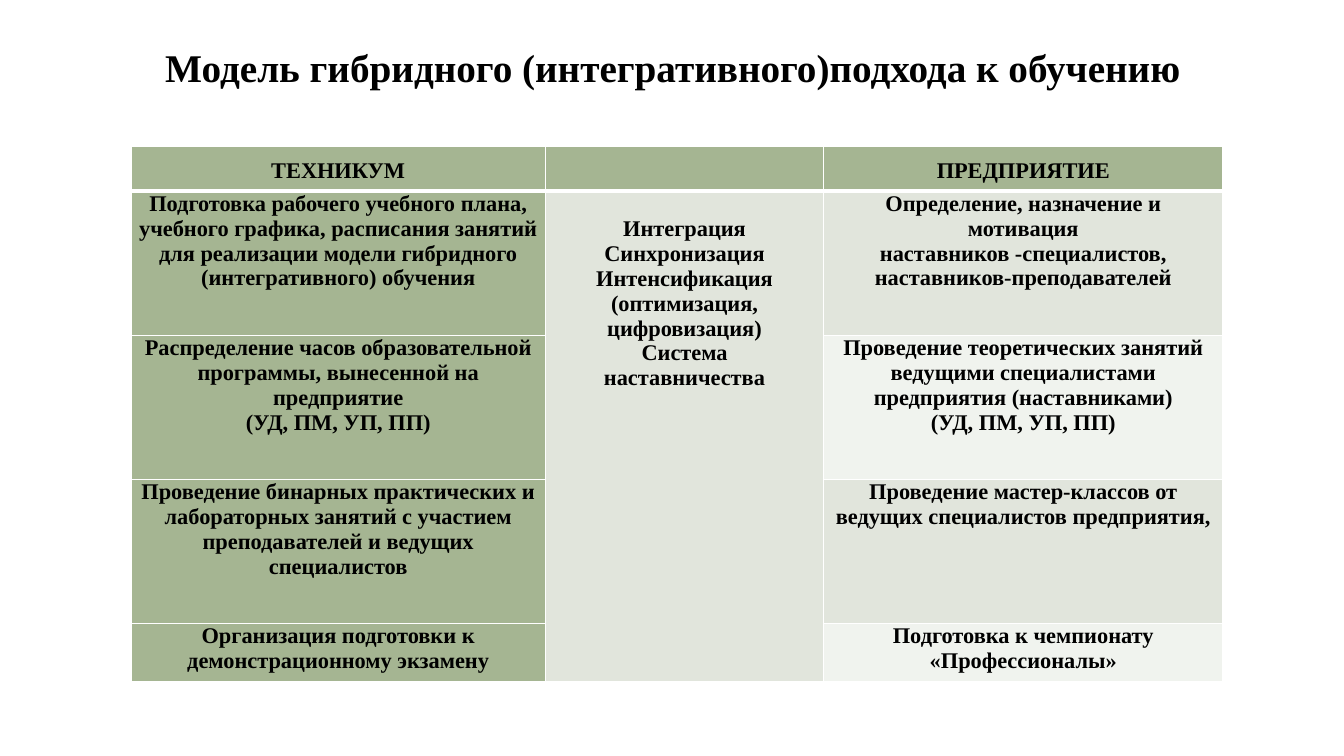
from lxml import etree
from pptx import Presentation, util as u
from pptx.dml.color import RGBColor
from pptx.enum import text
from pptx.oxml import ns

COLORS = {"ink": "000000", "line": "FFFFFF", "head": "A5B592",
          "odd": "E1E5DC", "even": "F0F3EE"}
FONT = "Times New Roman"
WIDE, HIGH = 13.33, 7.5

TITLE = "Модель гибридного (интегративного)подхода к обучению"
COLS = [4.11, 2.76, 3.96]
ROWS = [0.45, 1.43, 1.43, 1.43, 0.57]
COLLEGE = [
    "ТЕХНИКУМ",
    "Подготовка рабочего учебного плана, учебного графика, расписания "
    "занятий для реализации модели гибридного (интегративного) обучения",
    "Распределение часов образовательной программы, вынесенной на "
    "предприятие\n(УД, ПМ, УП, ПП)",
    "Проведение бинарных практических и лабораторных занятий с участием "
    "преподавателей и ведущих специалистов",
    "Организация подготовки к демонстрационному экзамену",
]
SHARED = ("Интеграция\nСинхронизация\nИнтенсификация\n"
          "(оптимизация, цифровизация)\nСистема\nнаставничества")
FIRM = [
    "ПРЕДПРИЯТИЕ",
    "Определение, назначение и мотивация\nнаставников -специалистов,\n"
    "наставников-преподавателей",
    "Проведение теоретических занятий ведущими специалистами предприятия "
    "(наставниками)\n(УД, ПМ, УП, ПП)",
    "Проведение мастер-классов от ведущих специалистов предприятия,",
    "Подготовка к чемпионату «Профессионалы»",
]


class Deck:
    def __init__(self):
        self.file = Presentation()
        self.file.slide_width = u.Inches(WIDE)
        self.file.slide_height = u.Inches(HIGH)
        self.slide = self.file.slides.add_slide(self.file.slide_layouts[5])

    def place(self, left, top, width, height):
        """Turn shares of the slide into lengths."""
        across, down = self.file.slide_width, self.file.slide_height
        return (round(left * across), round(top * down),
                round(width * across), round(height * down))

    def label(self, frame, words, size, spacing):
        frame.text = words
        frame.word_wrap = True
        for para in frame.paragraphs:
            para.alignment = text.PP_ALIGN.CENTER
            para.line_spacing = spacing
            for run in para.runs:
                run.font.name = FONT
                run.font.size = u.Pt(size)
                run.font.bold = True
                run.font.color.rgb = RGBColor.from_string(COLORS["ink"])

    def title(self, words, box):
        shape = self.slide.shapes.title
        shape.left, shape.top, shape.width, shape.height = self.place(*box)
        frame = shape.text_frame
        self.label(frame, words, 28, 0.9)
        frame.auto_size = text.MSO_AUTO_SIZE.NONE
        frame.vertical_anchor = text.MSO_ANCHOR.MIDDLE

    def table(self, box, cols, rows):
        frame = self.slide.shapes.add_table(
            len(rows), len(cols), *self.place(*box))
        grid = frame.table
        grid.horz_banding = False
        for col, width in zip(grid.columns, cols):
            col.width = u.Inches(width)
        for row, height in zip(grid.rows, rows):
            row.height = u.Inches(height)
        return grid

    def cell(self, cell, words, fill, spacing=1.0, top=0, base=1):
        cell.margin_left = cell.margin_right = u.Inches(0.07)
        cell.margin_top, cell.margin_bottom = u.Inches(top), 0
        cell.fill.solid()
        cell.fill.fore_color.rgb = RGBColor.from_string(COLORS[fill])
        self.edge(cell, base)
        if words:
            self.label(cell.text_frame, words, 16, spacing)

    def edge(self, cell, base):
        """Draw thin borders, with the bottom one base points wide."""
        props = cell._tc.get_or_add_tcPr()
        for spot, side in enumerate("LRTB"):
            width = base if side == "B" else 1
            line = etree.Element(ns.qn("a:ln" + side), w=str(u.Pt(width)))
            fill = etree.SubElement(line, ns.qn("a:solidFill"))
            etree.SubElement(fill, ns.qn("a:srgbClr"), val=COLORS["line"])
            props.insert(spot, line)


def main():
    deck = Deck()
    deck.title(TITLE, (0.069, 0.053, 0.863, 0.079))
    grid = deck.table((0.0975, 0.193, 0.812, 0.71), COLS, ROWS)
    for row, (left, right) in enumerate(zip(COLLEGE, FIRM)):
        if row == 0:
            for col, words in enumerate((left, "", right)):
                deck.cell(grid.cell(0, col), words, "head", 1.5, base=3)
            continue
        deck.cell(grid.cell(row, 0), left, "head")
        deck.cell(grid.cell(row, 1), SHARED if row == 1 else "", "odd",
                  top=0.25)
        deck.cell(grid.cell(row, 2), right, "odd" if row % 2 else "even")
    grid.cell(1, 1).merge(grid.cell(len(ROWS) - 1, 1))
    deck.file.save("out.pptx")


if __name__ == "__main__":
    main()
